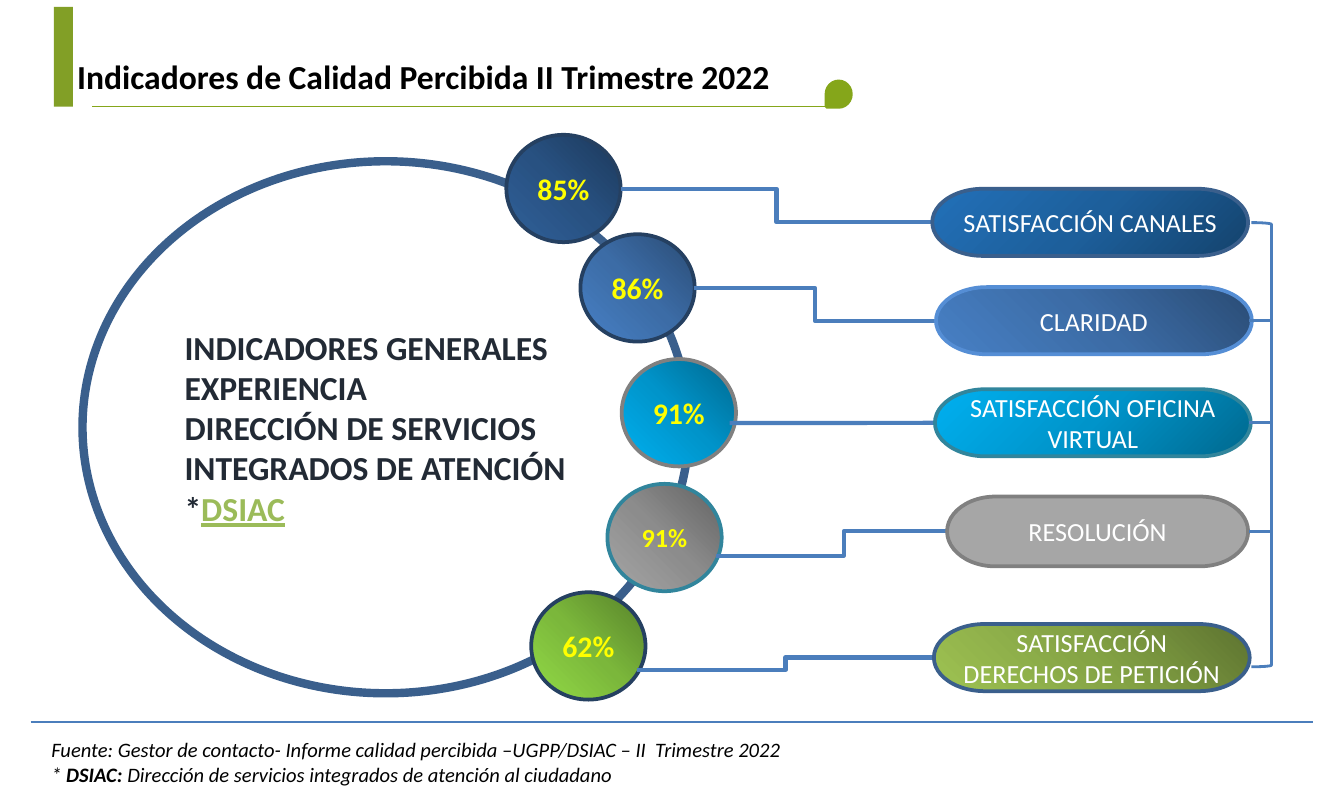
"""Build the perceived-quality indicator slide for the second quarter of 2022."""
from dataclasses import dataclass
from typing import NamedTuple, Optional

from lxml import etree
from pptx import Presentation
from pptx import util as u
from pptx.dml.color import RGBColor
from pptx.enum import shapes, text
from pptx.oxml.ns import qn


@dataclass(frozen=True)
class Theme:
    font: str = "Calibri"
    white: str = "FFFFFF"
    black: str = "000000"
    ink: str = "222A35"
    accent: str = "9BBB59"
    bar: str = "829F26"
    leaf: str = "85A61A"
    ring: str = "3A5F8C"
    link: str = "4B7EBC"
    percent: str = "FFFF00"
    glow: str = "E46C0A"
    navy: str = "254061"
    sky: str = "558ED5"
    teal: str = "31859C"
    grey: str = "808080"
    silver: str = "A6A6A6"
    heading: int = 18
    value: int = 16
    label: int = 14
    note: int = 11


class Box(NamedTuple):
    x: float
    y: float
    w: float
    h: float

    @property
    def middle(self) -> float:
        return self.y + self.h / 2


class Gradient(NamedTuple):
    colors: tuple[str, str, str]
    from_bottom: bool = False


T = Theme()
SHAPE = shapes.MSO_SHAPE
LINE = shapes.MSO_CONNECTOR
ALIGN = text.PP_ALIGN
BLUE = ("2A4C75", "3C6CA6", "4780C5")
CYAN = ("00688E", "0094CA", "00B0F0")


class Indicator(NamedTuple):
    value: str
    label: str
    circle: Box
    pill: Box
    start: tuple[float, float]
    circle_fill: Gradient
    pill_fill: Gradient | str
    circle_line: str
    pill_line: str
    size: int = T.value
    overlap: float = 0


def circle(x: float, y: float) -> Box:
    return Box(x, y, 2.16, 2.03)


def pill(x: float, y: float) -> Box:
    return Box(x, y, 5.97, 1.27)


INDICATORS = [
    Indicator("85%", "SATISFACCIÓN CANALES", circle(9.57, 2.55), pill(17.62, 3.57), (11.73, 3.57),
              Gradient(("1C395B", "285181", "306099")),
              Gradient(("14436D", "1D5F9B", "2270B8"), True), T.navy, T.ring),
    Indicator("86%", "CLARIDAD", circle(10.97, 4.43), pill(17.69, 5.43), (13.11, 5.44),
              Gradient(BLUE), Gradient(BLUE), T.navy, T.sky),
    Indicator("91%", "SATISFACCIÓN OFICINA VIRTUAL", circle(11.75, 6.79), pill(17.67, 7.36),
              (13.79, 8), Gradient(CYAN), Gradient(CYAN, True), T.grey, T.teal),
    Indicator("91%", "RESOLUCIÓN", circle(11.48, 9.15), Box(17.9, 9.39, 5.69, 1.32),
              (13.54, 10.51), Gradient(("626262", "8C8C8C", "A6A6A6")), T.silver,
              T.teal, T.grey, T.label, 0.45),
    Indicator("62%", "SATISFACCIÓN DERECHOS DE PETICIÓN", circle(10.04, 11.2),
              pill(17.65, 11.8), (12.04, 12.67), Gradient(("57812A", "7BB73B", "92DA46")),
              Gradient(("5D7330", "85A445", "9EC252")), T.navy, T.ring),
]


def emu(box: Box) -> list[u.Cm]:
    return [u.Cm(v) for v in box]


def fill_radial(fill, gradient: Gradient) -> None:
    """Fill with a circular gradient that starts from a right-hand corner."""
    fill.gradient()
    grad = fill._xPr.find(qn("a:gradFill"))
    for child in list(grad):
        grad.remove(child)
    stops = etree.SubElement(grad, qn("a:gsLst"))
    for pos, color in zip((0, 50000, 100000), gradient.colors):
        gs = etree.SubElement(stops, qn("a:gs"), pos=str(pos))
        etree.SubElement(gs, qn("a:srgbClr"), val=color)
    radial = etree.SubElement(grad, qn("a:path"), path="circle")
    vertical = "t" if gradient.from_bottom else "b"
    etree.SubElement(radial, qn("a:fillToRect"), {"l": "100000", vertical: "100000"})


def add_shape(s, kind, box: Box, fill: Gradient | str | None,
              line: Optional[str] = None, width: float = 2):
    """Draw a preset shape without a shadow."""
    sp = s.shapes.add_shape(kind, *emu(box))
    sp.shadow.inherit = False
    if fill is None:
        sp.fill.background()
    elif isinstance(fill, Gradient):
        fill_radial(sp.fill, fill)
    else:
        sp.fill.solid()
        sp.fill.fore_color.rgb = RGBColor.from_string(fill)
    if line:
        sp.line.color.rgb = RGBColor.from_string(line)
        sp.line.width = u.Pt(width)
    else:
        sp.line.fill.background()
    return sp


def add_line(s, x1: float, y1: float, x2: float, y2: float, color: str = T.link,
             width: float = 1.5, kind=LINE.STRAIGHT) -> None:
    """Draw a connector without a shadow."""
    cx = s.shapes.add_connector(kind, u.Cm(x1), u.Cm(y1), u.Cm(x2), u.Cm(y2))
    cx.line.color.rgb = RGBColor.from_string(color)
    cx.line.width = u.Pt(width)
    etree.SubElement(cx._element.spPr, qn("a:effectLst"))


def add_run(p, words: str, *, size: int, color: str, bold: bool = False, italic: bool = False,
            underline: bool = False, outline: Optional[str] = None) -> None:
    """Append one formatted run to a paragraph."""
    r = p.add_run()
    r.text = words
    f = r.font
    f.name, f.size, f.bold, f.italic = T.font, u.Pt(size), bold, italic
    f.underline = underline
    f.color.rgb = RGBColor.from_string(color)
    if outline:
        ln = etree.Element(qn("a:ln"), w=str(u.Pt(0.75)))
        solid = etree.SubElement(ln, qn("a:solidFill"))
        etree.SubElement(solid, qn("a:srgbClr"), val=outline)
        r._r.get_or_add_rPr().insert(0, ln)


def write(sp, paragraphs: list[list[tuple[str, dict]]], *, align=ALIGN.LEFT,
          anchor=text.MSO_ANCHOR.MIDDLE, **base) -> None:
    """Write paragraphs of runs, each run overriding the base format."""
    tf = sp.text_frame
    tf.word_wrap = True
    tf.vertical_anchor = anchor
    for i, runs in enumerate(paragraphs):
        p = tf.add_paragraph() if i else tf.paragraphs[0]
        p.alignment = align
        for words, extra in runs:
            add_run(p, words, **{**base, **extra})


def add_indicator(s, item: Indicator) -> None:
    """Draw a percentage circle linked to its labelled pill."""
    sp = add_shape(s, SHAPE.FLOWCHART_CONNECTOR, item.circle, item.circle_fill, item.circle_line)
    write(sp, [[(item.value, {})]], align=ALIGN.CENTER, size=item.size, color=T.percent,
          bold=True, outline=T.glow)
    x, y = item.start
    end = item.pill.middle
    kind = LINE.STRAIGHT if abs(end - y) < 0.02 else LINE.ELBOW
    add_line(s, x, y, item.pill.x + item.overlap, end, width=2.25, kind=kind)
    sp = add_shape(s, SHAPE.FLOWCHART_TERMINATOR, item.pill, item.pill_fill, item.pill_line)
    write(sp, [[(item.label, {})]], align=ALIGN.CENTER, size=T.label, color=T.white)


def main() -> None:
    prs = Presentation()
    prs.slide_width = u.Cm(25.4)
    prs.slide_height = u.Cm(14.9)
    s = prs.slides.add_slide(prs.slide_layouts[6])

    add_shape(s, SHAPE.RECTANGLE, Box(1.02, 0.13, 0.36, 1.89), T.bar)
    add_line(s, 1.74, 2.01, 15.85, 2.01, T.leaf, 0.75)
    add_shape(s, SHAPE.TEAR, Box(15.62, 1.54, 0.46, 0.48), T.leaf, T.leaf).rotation = 180
    title = s.shapes.add_textbox(*emu(Box(1.21, 0.94, 15.68, 0.99)))
    write(title, [[("Indicadores de Calidad Percibida II Trimestre 2022", {})]],
          anchor=text.MSO_ANCHOR.TOP, size=T.heading, color=T.black, bold=True)

    ring = add_shape(s, SHAPE.FLOWCHART_CONNECTOR, Box(1.56, 3.05, 11.46, 10.06),
                     T.white, T.ring, 4.5)
    write(ring, [[("INDICADORES GENERALES EXPERIENCIA", {})],
                 [("DIRECCIÓN DE SERVICIOS INTEGRADOS DE ATENCIÓN *", {}),
                  ("DSIAC", {"color": T.accent, "underline": True})]],
          size=T.heading, color=T.ink, bold=True)
    for item in INDICATORS:
        add_indicator(s, item)

    add_shape(s, SHAPE.RIGHT_BRACKET, Box(23.65, 4.21, 0.38, 8.4), None, T.link, 1.5)
    for item in INDICATORS[1:4]:
        add_line(s, 24.04, item.pill.middle, 23.6, item.pill.middle)

    add_line(s, 0.58, 13.65, 24.81, 13.65, width=0.75)
    source = s.shapes.add_textbox(*emu(Box(0.72, 13.81, 20.37, 1.09)))
    write(source, [[("Fuente: Gestor de contacto- Informe calidad percibida "
                     "–UGPP/DSIAC – II  Trimestre 2022", {})],
                   [("* ", {}), ("DSIAC: ", {"bold": True}),
                    ("Dirección de servicios integrados de atención al ciudadano", {})]],
          anchor=text.MSO_ANCHOR.TOP, size=T.note, color=T.black, italic=True)
    prs.save("out.pptx")


if __name__ == "__main__":
    main()
